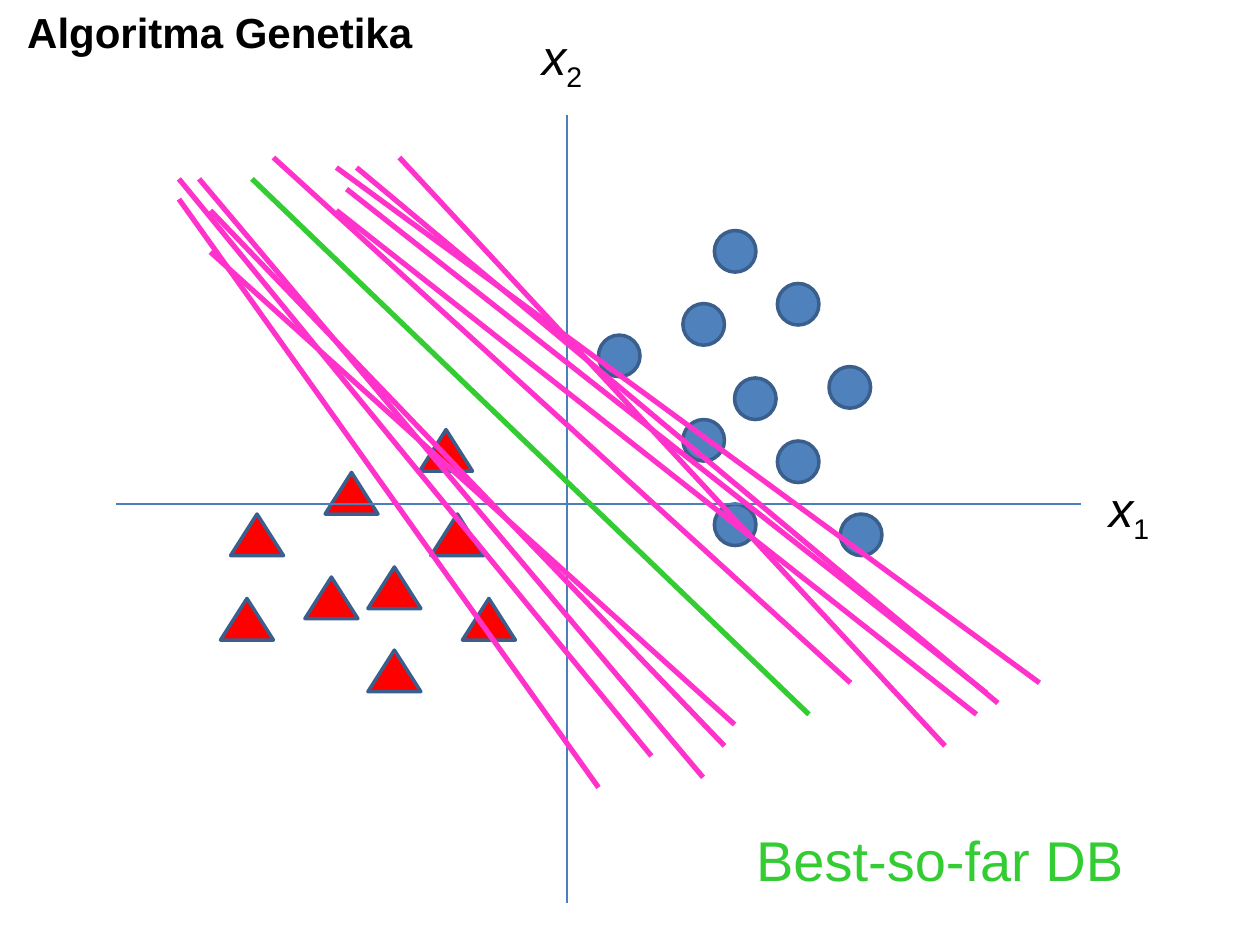
import pptx
import pptx.util
import pptx.dml.color
import pptx.enum.shapes
import pptx.enum.text
import lxml.etree
from pptx.util import Inches

KINDS = pptx.enum.shapes.MSO_SHAPE
EDGE, AXIS, PINK, GREEN, BLACK = "3A5F8C", "4B7EBC", "FF33CC", "33CC33", "000000"

# Left and top of each data point
DOTS = [(5.42, 2.41), (6.17, 2.25), (6.67, 4.08), (6.58, 2.91), (5.67, 4),
        (4.75, 2.66), (5.67, 1.83), (6.17, 3.5), (5.42, 3.33), (5.83, 3)]
PEAKS = [(2.42, 4.58), (2.92, 4.5), (3.67, 4.75), (3.33, 3.41), (1.83, 4.08),
         (3.42, 4.08), (2.58, 3.75), (1.75, 4.75), (2.92, 5.16)]

# Start and end of each candidate decision boundary
BOUNDS = [(1.58, 1.42, 5.58, 6.17), (2.75, 1.5, 7.83, 5.5),
          (1.67, 1.67, 5.75, 5.92), (3.17, 1.25, 7.5, 5.92),
          (1.42, 1.42, 5.17, 6), (2.83, 1.33, 7.92, 5.58),
          (2.67, 1.67, 7.75, 5.67), (2.67, 1.33, 8.25, 5.42),
          (1.67, 2, 5.83, 5.75), (1.42, 1.58, 4.75, 6.25),
          (2.17, 1.25, 6.75, 5.42)]
BEST = (2, 1.42, 6.42, 5.67)


def paint(code):
    return pptx.dml.color.RGBColor.from_string(code)


def add_marks(shapes, kind, spots, width, color):
    for left, top in spots:
        mark = shapes.add_shape(kind, Inches(left), Inches(top),
                                Inches(width), Inches(0.33))
        mark.shadow.inherit = False
        mark.fill.solid()
        mark.fill.fore_color.rgb = paint(color)
        mark.line.color.rgb = paint(EDGE)
        mark.line.width = pptx.util.Pt(2)


def add_line(shapes, ends, color, weight):
    line = shapes.add_connector(pptx.enum.shapes.MSO_CONNECTOR.STRAIGHT,
                                *(Inches(end) for end in ends))
    line.line.color.rgb = paint(color)
    line.line.width = pptx.util.Pt(weight)
    lxml.etree.SubElement(line._element.spPr, pptx.oxml.ns.qn("a:effectLst"))


def add_text(shapes, box, text, size, color=BLACK, bold=False):
    """Add a centred line of text and return its paragraph."""
    frame = shapes.add_textbox(*(Inches(side) for side in box)).text_frame
    frame.word_wrap = True
    frame.auto_size = pptx.enum.text.MSO_AUTO_SIZE.SHAPE_TO_FIT_TEXT
    para = frame.paragraphs[0]
    para.alignment = pptx.enum.text.PP_ALIGN.CENTER
    para.font.name = "Arial"
    para.font.size = pptx.util.Pt(size)
    para.font.bold = bold
    para.font.color.rgb = paint(color)
    para.add_run().text = text
    return para


def add_label(shapes, left, top, index):
    """Name an axis: italic x with a subscript index."""
    para = add_text(shapes, (left, top, 0.58, 0.57), "x", 28)
    para.runs[0].font.italic = True
    sub = para.add_run()
    sub.text = index
    sub._r.get_or_add_rPr().set("baseline", "-25000")


def add_plot(shapes):
    plot = shapes.add_group_shape().shapes
    add_marks(plot, KINDS.OVAL, DOTS, 0.33, "4F81BD")
    add_marks(plot, KINDS.ISOSCELES_TRIANGLE, PEAKS, 0.42, "FF0000")
    add_line(plot, (0.92, 4, 8.58, 4), AXIS, 0.75)
    add_line(plot, (4.5, 0.91, 4.5, 7.17), AXIS, 0.75)
    add_label(plot, 8.67, 3.75, "1")
    add_label(plot, 4.17, 0.16, "2")


def main():
    deck = pptx.Presentation()
    deck.slide_width, deck.slide_height = Inches(10), Inches(7.5)
    shapes = deck.slides.add_slide(deck.slide_layouts[6]).shapes
    add_plot(shapes)
    for ends in BOUNDS:
        add_line(shapes, ends, PINK, 3)
    add_line(shapes, BEST, GREEN, 3)
    add_text(shapes, (5.5, 6.5, 3.92, 0.64), "Best-so-far DB", 32, GREEN)
    add_text(shapes, (0, 0, 3.58, 0.5), "Algoritma Genetika ", 24, bold=True)
    deck.save("out.pptx")


if __name__ == "__main__":
    main()
